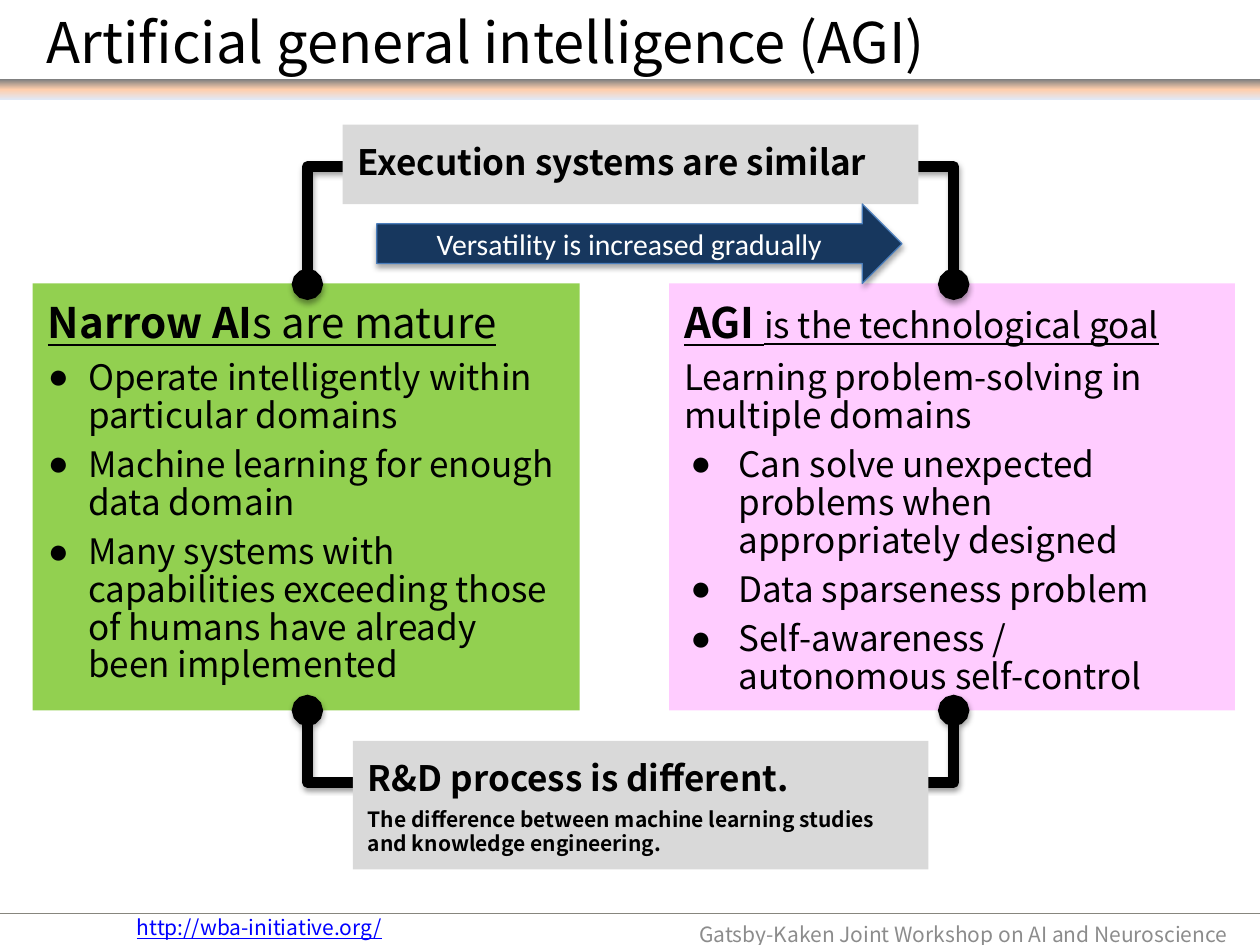
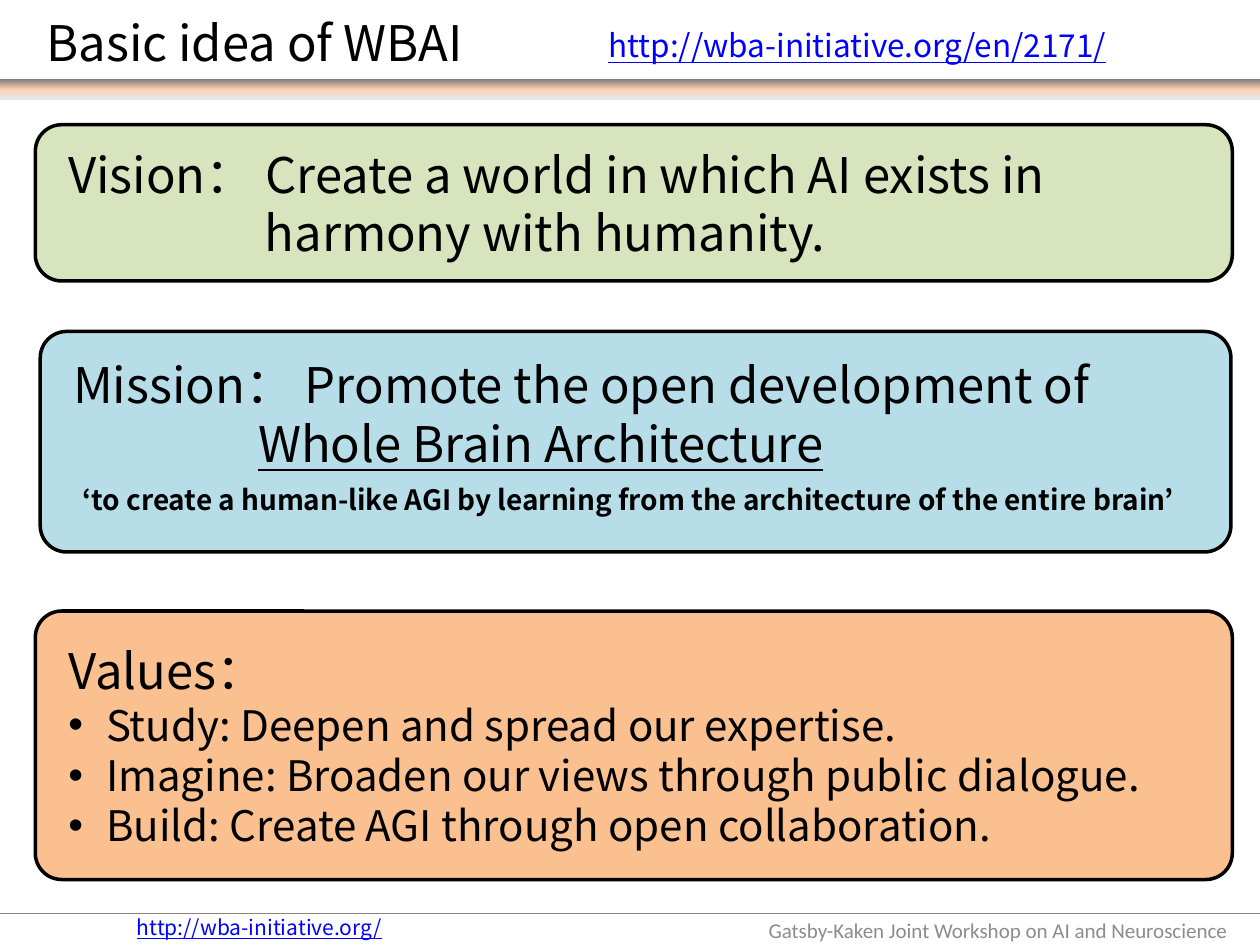
import copy

import pptx
import pptx.dml.color
import pptx.enum.shapes
import pptx.enum.text
import pptx.oxml
import pptx.oxml.ns
import pptx.util
from lxml import etree

Pt = pptx.util.Pt
RGBColor = pptx.dml.color.RGBColor
SHAPES = pptx.enum.shapes.MSO_SHAPE
ANCHOR = pptx.enum.text.MSO_ANCHOR
ALIGN = pptx.enum.text.PP_ALIGN
qn = pptx.oxml.ns.qn

BLACK = RGBColor(0x00, 0x00, 0x00)
WHITE = RGBColor(0xFF, 0xFF, 0xFF)
LINK_BLUE = RGBColor(0x00, 0x00, 0xFF)
FOOTER_GREY = RGBColor(0x8C, 0x8C, 0x8C)
RULE_GREY = RGBColor(0x87, 0x86, 0x7E)
CAPTION_GREY = RGBColor(0xD9, 0xD9, 0xD9)
NARROW_GREEN = RGBColor(0x92, 0xD0, 0x50)
AGI_PINK = RGBColor(0xFF, 0xCC, 0xFF)
ARROW_NAVY = RGBColor(0x17, 0x37, 0x5E)
ARROW_EDGE = RGBColor(0x4B, 0x7E, 0xBC)
VISION_GREEN = RGBColor(0xD7, 0xE4, 0xBD)
MISSION_BLUE = RGBColor(0xB7, 0xDE, 0xE8)
VALUES_ORANGE = RGBColor(0xFA, 0xC0, 0x90)
BAND_STOPS = [
    (0, RGBColor(0x80, 0x80, 0x80)),
    (0.5, RGBColor(0xFF, 0xCE, 0xAC)),
    (1, RGBColor(0xE1, 0xE8, 0xF5)),
]

MAIN_FONT = "Noto Sans CJK JP"
PLAIN_FONT = "Calibri"
SLIDE_WIDTH, SLIDE_HEIGHT = 720, 540
DEFAULT_INSETS = (7.2, 3.6, 7.2, 3.6)
PANEL_INSETS = (8.64, 10.8, 8.64, 10.8)
CARD_INSETS = (14.4, 2.88, 8.64, 2.88)


# Text and shape helpers

def write(frame, *runs, size=20, color=BLACK, font=MAIN_FONT, bold=False,
          underline=False, align=ALIGN.LEFT, bullet=None, left=0, hanging=0,
          line_spacing=None, gap=0):
    """Add a paragraph; each run is text or (text, format changes)."""
    first = not frame.paragraphs[0].runs
    paragraph = frame.paragraphs[0] if first else frame.add_paragraph()
    properties = paragraph._p.get_or_add_pPr()
    if left:
        properties.set("marL", str(Pt(left)))
        properties.set("indent", str(-Pt(hanging)))
    if bullet:
        etree.SubElement(properties, qn("a:buFont"), typeface="Arial")
        etree.SubElement(properties, qn("a:buChar"), char=bullet)
    paragraph.alignment = align
    if line_spacing:
        paragraph.line_spacing = line_spacing
    if gap:
        paragraph.space_before = Pt(0 if first else gap * size * 2)
        paragraph.space_after = Pt(gap * size)
    for part in runs:
        text, changes = (part, {}) if isinstance(part, str) else part
        run = paragraph.add_run()
        run.text = text
        run.font.size = Pt(changes.get("size", size))
        run.font.bold = changes.get("bold", bold)
        run.font.underline = changes.get("underline", underline)
        run.font.color.rgb = color
        run.font.name = font
        etree.SubElement(run._r.get_or_add_rPr(), qn("a:ea"), typeface=font)


def set_frame(shape, insets=DEFAULT_INSETS, anchor=ANCHOR.TOP):
    frame = shape.text_frame
    frame.word_wrap = True
    frame.auto_size = pptx.enum.text.MSO_AUTO_SIZE.NONE
    frame.vertical_anchor = anchor
    (frame.margin_left, frame.margin_top,
     frame.margin_right, frame.margin_bottom) = map(Pt, insets)
    return frame


def add_text_box(slide, box, insets=DEFAULT_INSETS, anchor=ANCHOR.TOP):
    return set_frame(slide.shapes.add_textbox(*map(Pt, box)), insets, anchor)


def add_box(slide, box, fill, kind=SHAPES.RECTANGLE, line=None, width=1):
    shape = slide.shapes.add_shape(kind, *map(Pt, box))
    shape.shadow.inherit = False
    shape.fill.solid()
    shape.fill.fore_color.rgb = fill
    if line is None:
        shape.line.fill.background()
    else:
        shape.line.color.rgb = line
        shape.line.width = Pt(width)
    return shape


def add_shadow(shape, distance, opacity):
    shape.shadow.inherit = False
    effects = shape.element.spPr.find(qn("a:effectLst"))
    shadow = etree.SubElement(
        effects, qn("a:outerShdw"), blurRad=str(Pt(3.1)),
        dist=str(Pt(distance)), dir="5400000", rotWithShape="0")
    color = etree.SubElement(shadow, qn("a:srgbClr"), val=str(BLACK))
    etree.SubElement(color, qn("a:alpha"), val=str(opacity * 1000))


# Parts shared by both slides

def add_base(presentation, title, title_size, footer_top, footer_font):
    slide = presentation.slides.add_slide(presentation.slide_layouts[5])
    band = add_box(slide, (0, 45.4, SLIDE_WIDTH, 11.5), WHITE)
    band.fill.gradient()
    band.fill.gradient_angle = 270
    stop_list = band.element.spPr.find(".//" + qn("a:gsLst"))
    stop_list.append(copy.deepcopy(stop_list[0]))
    for stop, (position, color) in zip(band.fill.gradient_stops, BAND_STOPS):
        stop.position = position
        stop.color.rgb = color

    rule = slide.shapes.add_connector(
        pptx.enum.shapes.MSO_CONNECTOR.STRAIGHT,
        0, Pt(522), Pt(SLIDE_WIDTH), Pt(522))
    rule.line.color.rgb = RULE_GREY
    rule.line.width = Pt(1)
    etree.SubElement(rule.element.spPr, qn("a:effectLst"))

    write(add_text_box(slide, (67.5, 519, 161.5, 21.6)),
          "http://wba-initiative.org/", size=12, color=LINK_BLUE,
          underline=True, align=ALIGN.CENTER)
    write(add_text_box(slide, (308.2, footer_top, 403.2, 17.3),
                       anchor=ANCHOR.MIDDLE),
          "Gatsby-Kaken Joint Workshop on AI and Neuroscience ",
          size=12, color=FOOTER_GREY, font=footer_font, align=ALIGN.RIGHT)

    heading = slide.shapes.title
    heading.left, heading.top, heading.width, heading.height = map(
        Pt, (19.4, 0.7, 635, 46.1))
    write(set_frame(heading, anchor=ANCHOR.MIDDLE), title, size=title_size)
    return slide


# Comparison of narrow AI and AGI

def add_bracket(slide, left, right, end_y, bar_y):
    """Join two panels by a bar at bar_y, with dots at both ends."""
    builder = slide.shapes.build_freeform(Pt(left), Pt(end_y))
    builder.add_line_segments(
        [(Pt(left), Pt(bar_y)), (Pt(right), Pt(bar_y)), (Pt(right), Pt(end_y))],
        close=False)
    bracket = builder.convert_to_shape()
    bracket.fill.background()
    bracket.line.color.rgb = BLACK
    bracket.line.width = Pt(6)
    line = bracket.element.spPr.find(qn("a:ln"))
    etree.SubElement(line, qn("a:round"))
    for end in ("a:headEnd", "a:tailEnd"):
        etree.SubElement(line, qn(end), type="oval")
    add_shadow(bracket, 1.6, 38)


def add_panel(slide, box, fill, heading, intro, bullets, left, hanging):
    frame = set_frame(add_box(slide, box, fill), PANEL_INSETS)
    spacing = {"line_spacing": 0.9, "gap": 0.11}
    write(frame, *heading, size=24, underline=True, **spacing)
    if intro:
        write(frame, intro, **spacing)
    for text in bullets:
        write(frame, text, bullet="●", left=left, hanging=hanging, **spacing)


def add_caption(slide, box, heading, detail=None):
    frame = set_frame(add_box(slide, box, CAPTION_GREY), PANEL_INSETS)
    for text, size in ((heading, 20), (detail, 12)):
        if text:
            write(frame, text, size=size, bold=True,
                  line_spacing=0.95, gap=0.11)


def add_versatility_arrow(slide, box):
    arrow = add_box(slide, box, ARROW_NAVY, SHAPES.RIGHT_ARROW,
                    ARROW_EDGE, 0.75)
    add_shadow(arrow, 1.8, 35)
    write(set_frame(arrow, anchor=ANCHOR.MIDDLE),
          "Versatility is increased gradually", size=17, color=WHITE,
          font=PLAIN_FONT, align=ALIGN.CENTER)


def build_agi_slide(presentation):
    slide = add_base(presentation, "Artificial general intelligence (AGI)",
                     32, 524.9, MAIN_FONT)
    panel_top, panel_height = 162, 244
    add_panel(
        slide, (18.7, panel_top, 312.5, panel_height), NARROW_GREEN,
        [("Narrow AI", {"bold": True}), "s", (" ", {"bold": True}),
         "are mature"], None,
        ["Operate intelligently within particular domains",
         "Machine learning for enough data domain",
         "Many systems with capabilities exceeding those of humans have "
         "already been implemented"], 23, 23)
    add_panel(
        slide, (382.3, panel_top, 323.3, panel_height), AGI_PINK,
        [("AGI ", {"bold": True}),
         ("is the technological goal", {"size": 20})],
        "Learning problem-solving in multiple domains",
        ["Can solve unexpected problems when appropriately designed",
         "Data sparseness problem",
         "Self-awareness / autonomous self-control"], 31, 27.4)

    add_bracket(slide, 175.7, 545, panel_top + 0.5, 95.2)
    add_caption(slide, (195.8, 71.3, 329, 45.4),
                "Execution systems are similar")
    add_versatility_arrow(slide, (215.3, 116.6, 300.2, 45.4))
    add_bracket(slide, 175.7, 545, panel_top + panel_height, 447.1)
    add_caption(slide, (201.6, 423.4, 329, 73.4), "R&D process is different.",
                "The difference between machine learning studies "
                "and knowledge engineering.")


# Vision, mission and values

def add_card(slide, box, fill, insets=CARD_INSETS, anchor=ANCHOR.MIDDLE):
    card = add_box(slide, box, fill, SHAPES.ROUNDED_RECTANGLE, BLACK, 2)
    card.adjustments[0] = 15.1 / box[3]
    return set_frame(card, insets, anchor)


def add_mission(slide, box):
    left, top, width, height = box
    frame = add_card(slide, box, MISSION_BLUE, (14.4, 9, 8.64, 2.88),
                     ANCHOR.TOP)
    write(frame, "Mission： Promote the open development of ",
          ("Whole Brain Architecture", {"underline": True}),
          size=28, left=105.8, hanging=105.8)
    write(add_text_box(slide, (left + 5.8, top + 86.4, width - 15.8, 28),
                       (0, 0, 0, 0)),
          "‘to create a human-like AGI by learning from the architecture "
          "of the entire brain’ ", size=16, bold=True, align=ALIGN.CENTER)


def build_wbai_slide(presentation):
    slide = add_base(presentation, "Basic idea of WBAI", 28, 522.7, PLAIN_FONT)
    write(add_text_box(slide, (340.6, 11.5, 321.8, 28.8)),
          "http://wba-initiative.org/en/2171/", size=18, color=LINK_BLUE,
          underline=True)

    write(add_card(slide, (20.2, 71.3, 684, 89.3), VISION_GREEN),
          "Vision： Create a world in which AI exists in harmony with humanity.",
          size=28, left=112.3, hanging=112.3)
    add_mission(slide, (23, 189.4, 680.4, 126))

    values = add_card(slide, (20.2, 349.2, 684, 153.4), VALUES_ORANGE)
    write(values, "Values：", size=28)
    for text in ("Study: Deepen and spread our expertise.",
                 "Imagine: Broaden our views through public dialogue.",
                 "Build: Create AGI through open collaboration."):
        write(values, text, size=24, bullet="•", left=21.6, hanging=21.6)


def main():
    presentation = pptx.Presentation()
    presentation.slide_width = Pt(SLIDE_WIDTH)
    presentation.slide_height = Pt(SLIDE_HEIGHT)
    build_agi_slide(presentation)
    build_wbai_slide(presentation)
    presentation.save("out.pptx")


if __name__ == "__main__":
    main()
